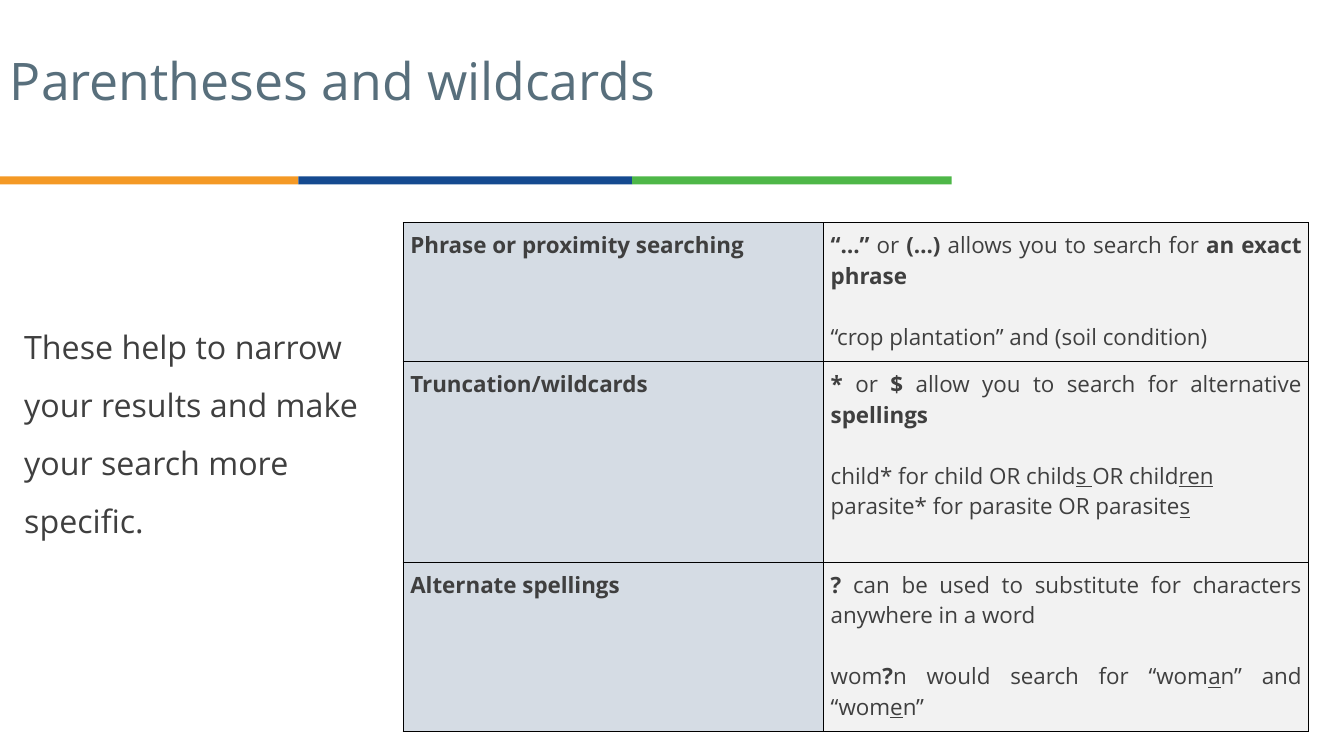
"""Builds a slide on parentheses and wildcards in literature searching."""
from lxml import etree
from pptx import Presentation
from pptx import util as u
from pptx.dml.color import RGBColor
from pptx.enum import shapes, text
from pptx.oxml.ns import qn

PX = 9144
FONT = "Open Sans"
SLATE = RGBColor(0x58, 0x6F, 0x7C)
CHARCOAL = RGBColor(0x3F, 0x3F, 0x3F)
ORANGE = RGBColor(0xF4, 0x99, 0x25)
BLUE = RGBColor(0x15, 0x4A, 0x90)
GREEN = RGBColor(0x4E, 0xB7, 0x48)
LABEL_FILL = RGBColor(0xD5, 0xDC, 0xE4)
DETAIL_FILL = RGBColor(0xF2, 0xF2, 0xF2)

STRIPES = [(0, 296, ORANGE), (296, 331, BLUE), (627, 317, GREEN)]
COLUMN_WIDTHS = [417, 481]
ROW_HEIGHTS = [138, 199, 168]
BOLD, UNDERLINE, PLAIN = "bold", "underline", "plain"

RULES = [
    ("Phrase or proximity searching",
     [("“…”", BOLD), (" or", PLAIN), (" (…) ", BOLD),
      ("allows you to search for ", PLAIN), ("an exact phrase", BOLD)],
     [[("“crop plantation” and (soil condition)", PLAIN)]]),
    ("Truncation/wildcards",
     [("*", BOLD), (" or ", PLAIN), ("$ ", BOLD),
      ("allow you to search for alternative", PLAIN), (" spellings", BOLD)],
     [[("child* for child OR child", PLAIN), ("s ", UNDERLINE),
       ("OR child", PLAIN), ("ren", UNDERLINE)],
      [("parasite* for parasite OR parasite", PLAIN), ("s", UNDERLINE)]]),
    ("Alternate spellings",
     [("?", BOLD), (" can be used to substitute for characters anywhere in a word", PLAIN)],
     [[("wom", PLAIN), ("?", BOLD), ("n would search for “wom", PLAIN),
       ("a", UNDERLINE), ("n” and “wom", PLAIN), ("e", UNDERLINE), ("n”", PLAIN)]]),
]


def px(*lengths):
    return [u.Emu(length * PX) for length in lengths]


def write(paragraph, runs, size=16, color=CHARCOAL, align=None, spacing=None, before=None):
    paragraph.alignment = align
    paragraph.line_spacing = spacing
    if before:
        paragraph.space_before = u.Pt(before)
    for words, style in runs:
        run = paragraph.add_run()
        run.text = words
        run.font.name = FONT
        run.font.size = u.Pt(size)
        run.font.color.rgb = color
        run.font.bold = style == BOLD
        run.font.underline = style == UNDERLINE


def add_text(slide, box, words, anchor=text.MSO_ANCHOR.TOP, indent=0, **style):
    frame = slide.shapes.add_textbox(*px(*box)).text_frame
    frame.word_wrap = True
    frame.vertical_anchor = anchor
    frame.margin_left = u.Emu((10 + indent) * PX)
    write(frame.paragraphs[0], [(words, PLAIN)], **style)


def add_stripe(slide, left, width, color):
    shape = slide.shapes.add_shape(shapes.MSO_SHAPE.RECTANGLE, *px(left, 175, width, 8))
    shape.shadow.inherit = False
    shape.fill.solid()
    shape.fill.fore_color.rgb = color
    shape.line.fill.background()


def add_borders(cell):
    properties = cell._tc.get_or_add_tcPr()
    for position, side in enumerate(("a:lnL", "a:lnR", "a:lnT", "a:lnB")):
        line = etree.Element(qn(side), w=str(u.Pt(1)))
        fill = etree.SubElement(line, qn("a:solidFill"))
        etree.SubElement(fill, qn("a:srgbClr"), val="000000")
        properties.insert(position, line)


def fill_cell(cell, color, paragraphs):
    cell.fill.solid()
    cell.fill.fore_color.rgb = color
    cell.margin_left, cell.margin_right, cell.margin_top, cell.margin_bottom = px(7, 7, 7, 7)
    add_borders(cell)
    frame = cell.text_frame
    for index, runs in enumerate(paragraphs):
        paragraph = frame.add_paragraph() if index else frame.paragraphs[0]
        write(paragraph, runs, align=text.PP_ALIGN.JUSTIFY, before=22 if index == 1 else None)


def add_rules_table(slide):
    box = px(400, 221, sum(COLUMN_WIDTHS), sum(ROW_HEIGHTS))
    table = slide.shapes.add_table(len(RULES), len(COLUMN_WIDTHS), *box).table
    table.first_row = table.horz_banding = False
    for column, width in zip(table.columns, px(*COLUMN_WIDTHS)):
        column.width = width
    for row, height in zip(table.rows, px(*ROW_HEIGHTS)):
        row.height = height
    for row, (label, explanation, examples) in zip(table.rows, RULES):
        fill_cell(row.cells[0], LABEL_FILL, [[(label, BOLD)]])
        fill_cell(row.cells[1], DETAIL_FILL, [explanation, *examples])


def main():
    presentation = Presentation()
    presentation.slide_width, presentation.slide_height = px(1333, 750)
    slide = presentation.slides.add_slide(presentation.slide_layouts[6])
    for stripe in STRIPES:
        add_stripe(slide, *stripe)
    add_text(slide, (0, 50, 891, 118), "Parentheses and wildcards",
             size=37, color=SLATE, spacing=0.9)
    add_text(slide, (0, 199, 400, 443),
             "These help to narrow your results and make your search more specific.",
             anchor=text.MSO_ANCHOR.MIDDLE, indent=14, size=23, spacing=1.5)
    add_rules_table(slide)
    presentation.save("out.pptx")


if __name__ == "__main__":
    main()
